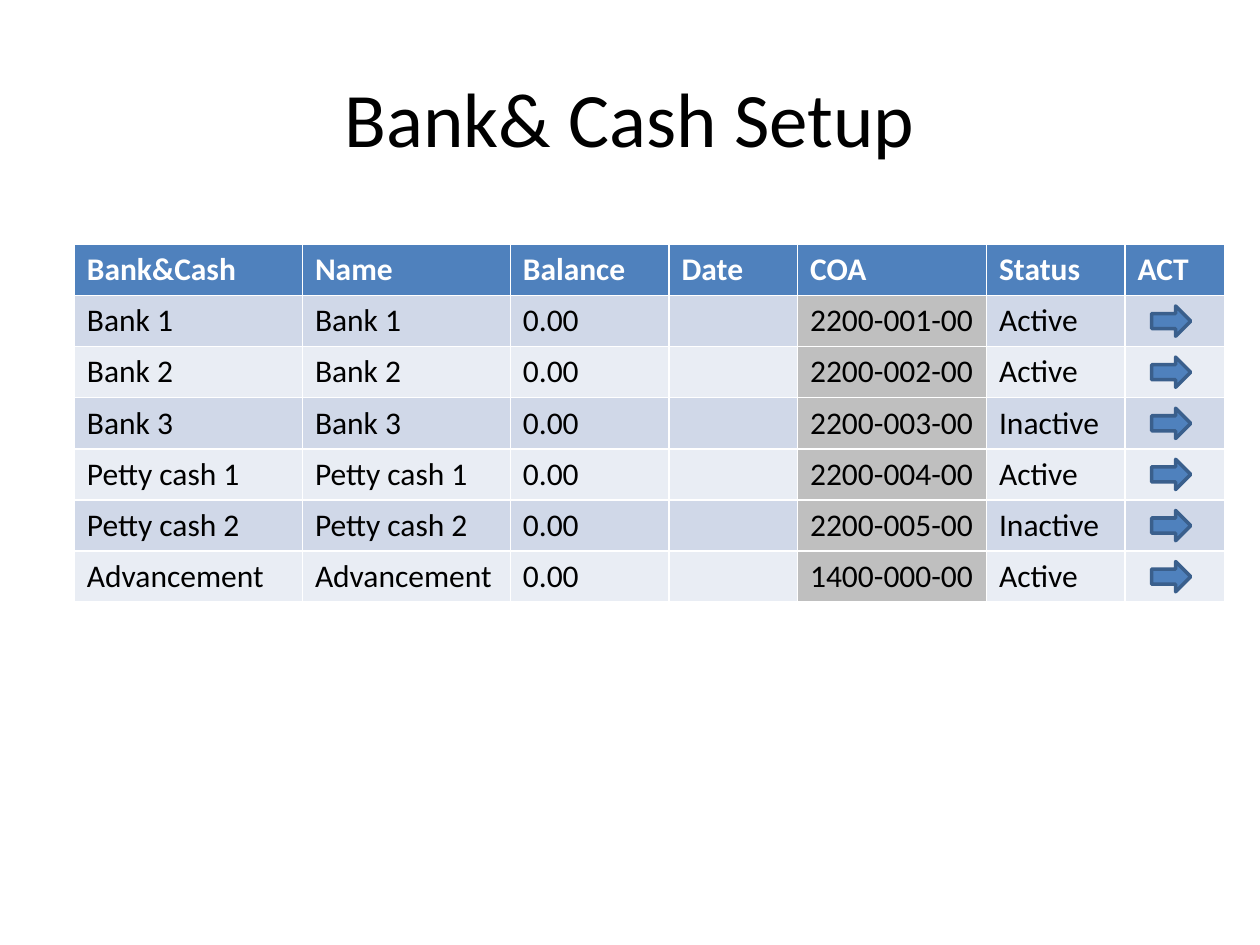
from dataclasses import dataclass

from pptx import Presentation
from pptx.dml.color import RGBColor
from pptx.enum import shapes, text
from pptx.util import Inches, Pt


@dataclass(frozen=True)
class Theme:
    font: str = "Calibri"
    title: int = 44
    body: int = 18
    black: str = "000000"
    white: str = "FFFFFF"
    blue: str = "4F81BD"
    edge: str = "3A5F8C"
    gray: str = "BFBFBF"
    bands: tuple = ("D0D8E8", "E9EDF4")


@dataclass(frozen=True)
class Account:
    name: str
    code: str
    status: str

    def cells(self) -> tuple:
        return self.name, self.name, "0.00", "", self.code, self.status, ""


THEME = Theme()
HEADS = ("Bank&Cash", "Name", "Balance", "Date", "COA", "Status", "ACT")
WIDTHS = (1.81, 1.65, 1.26, 1.02, 1.5, 1.1, 0.79)
CODE_COL = HEADS.index("COA")
ACCOUNTS = (
    Account("Bank 1", "2200-001-00", "Active"),
    Account("Bank 2", "2200-002-00", "Active"),
    Account("Bank 3", "2200-003-00", "Inactive"),
    Account("Petty cash 1", "2200-004-00", "Active"),
    Account("Petty cash 2", "2200-005-00", "Inactive"),
    Account("Advancement", "1400-000-00", "Active"),
)
LEFT, TOP, HEIGHT = 0.59, 1.94, 2.84
ROW = HEIGHT / (len(ACCOUNTS) + 1)


def paint(fill, color: str) -> None:
    fill.solid()
    fill.fore_color.rgb = RGBColor.from_string(color)


def style(font, color: str, **form) -> None:
    for key, value in {"name": THEME.font, **form}.items():
        setattr(font, key, value)
    font.color.rgb = RGBColor.from_string(color)


def add_title(slide, words: str) -> None:
    title = slide.shapes.title
    box = {"left": 0.5, "top": 0.3, "width": 9, "height": 1.25}
    for key, value in box.items():
        setattr(title, key, Inches(value))
    frame = title.text_frame
    frame.vertical_anchor = text.MSO_ANCHOR.MIDDLE
    para = frame.paragraphs[0]
    para.alignment = text.PP_ALIGN.CENTER
    run = para.add_run()
    run.text = words
    style(run.font, THEME.black, size=Pt(THEME.title))


def cell_fill(row: int, col: int) -> str:
    if row == 0:
        return THEME.blue
    return THEME.gray if col == CODE_COL else THEME.bands[(row - 1) % 2]


def add_grid(slide) -> None:
    rows = [HEADS] + [account.cells() for account in ACCOUNTS]
    # The default table style supplies the white rules
    grid = slide.shapes.add_table(
        len(rows), len(HEADS), Inches(LEFT), Inches(TOP),
        Inches(sum(WIDTHS)), Inches(HEIGHT)).table
    for column, width in zip(grid.columns, WIDTHS):
        column.width = Inches(width)
    for r, words in enumerate(rows):
        grid.rows[r].height = Inches(ROW)
        for c, word in enumerate(words):
            cell = grid.cell(r, c)
            cell.text = word
            paint(cell.fill, cell_fill(r, c))
            style(cell.text_frame.paragraphs[0].font,
                  THEME.black if r else THEME.white,
                  size=Pt(THEME.body), bold=r == 0)


def add_arrow(slide, row: int) -> None:
    wide, high = 0.31, 0.24
    top = TOP + row * ROW + (ROW - high) / 2
    arrow = slide.shapes.add_shape(
        shapes.MSO_SHAPE.RIGHT_ARROW,
        Inches(9.14), Inches(top), Inches(wide), Inches(high))
    arrow.shadow.inherit = False
    paint(arrow.fill, THEME.blue)
    paint(arrow.line.fill, THEME.edge)
    arrow.line.width = Pt(2)


def main() -> None:
    deck = Presentation()
    deck.slide_width, deck.slide_height = Inches(10), Inches(7.5)
    slide = deck.slides.add_slide(deck.slide_layouts.get_by_name("Title Only"))

    # Heading
    add_title(slide, "Bank& Cash Setup")

    # Accounts, with an action arrow on each row
    add_grid(slide)
    for row in range(1, len(ACCOUNTS) + 1):
        add_arrow(slide, row)

    deck.save("out.pptx")


if __name__ == "__main__":
    main()
